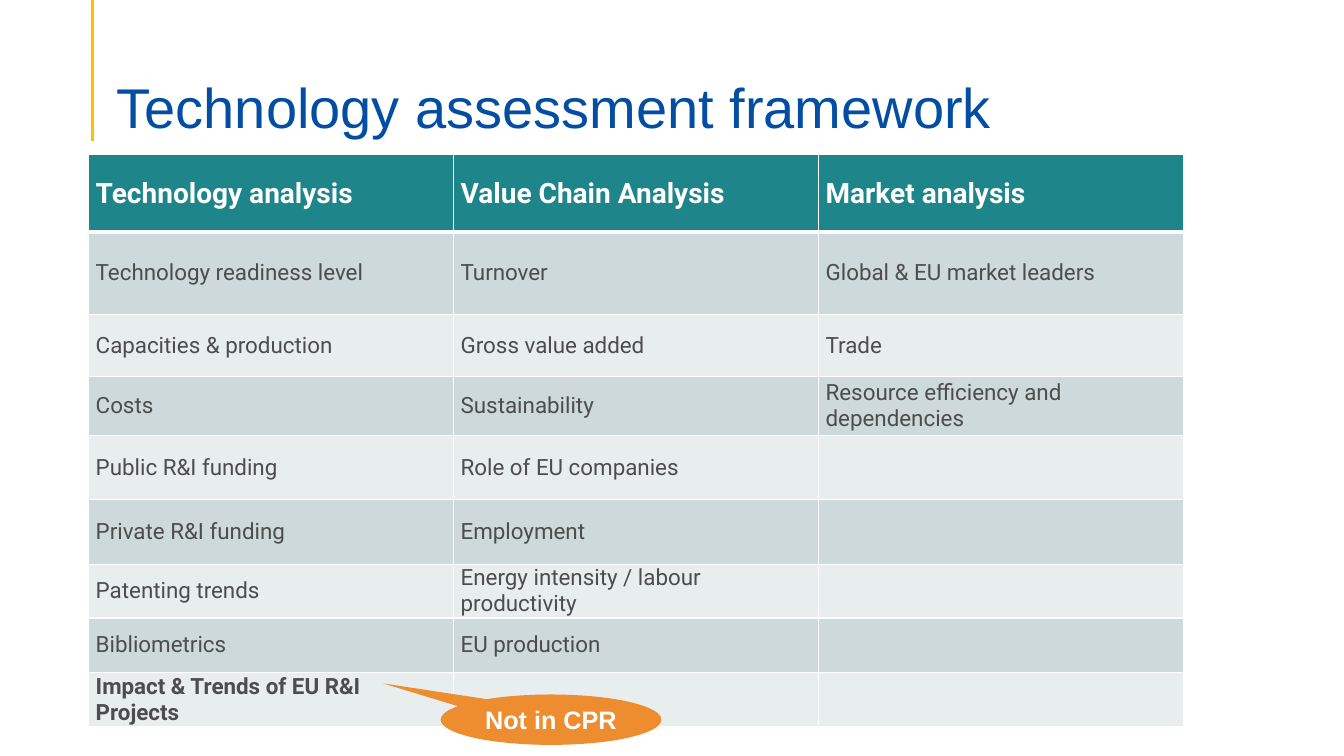
"""Build the technology assessment framework slide."""
import pptx
import pptx.dml.color
import pptx.enum.shapes
import pptx.enum.text
import pptx.oxml
import pptx.oxml.ns
import pptx.util
from pptx.util import Inches

MIDDLE = pptx.enum.text.MSO_ANCHOR.MIDDLE


def color(value):
    return pptx.dml.color.RGBColor.from_string(value)


def style(paragraph, name, size, value, bold=False):
    paragraph.font.name = name
    paragraph.font.size = pptx.util.Pt(size)
    paragraph.font.bold = bold
    paragraph.font.color.rgb = color(value)


presentation = pptx.Presentation()
presentation.slide_width = Inches(13.33)
presentation.slide_height = Inches(7.5)
slide = presentation.slides.add_slide(presentation.slide_layouts[6])

accent = slide.shapes.add_connector(
    pptx.enum.shapes.MSO_CONNECTOR.STRAIGHT, Inches(0.92), 0, Inches(0.92), Inches(1.4))
accent.line.color.rgb = color("FFC000")
accent.line.width = pptx.util.Pt(2.25)
accent._element.spPr.append(pptx.oxml.parse_xml(
    f"<a:effectLst {pptx.oxml.ns.nsdecls('a')}/>"))

title = slide.shapes.add_textbox(Inches(1.06), Inches(0.53), Inches(12.14), Inches(0.86))
title_frame = title.text_frame
title_frame.word_wrap = True
title_frame.vertical_anchor = pptx.enum.text.MSO_ANCHOR.BOTTOM
title_frame.margin_bottom = 0
paragraph = title_frame.paragraphs[0]
paragraph.text = "Technology assessment framework"
paragraph.line_spacing = 1.07
style(paragraph, "Arial", 40, "034EA2")

rows = [
    (0.77, "Technology analysis", "Value Chain Analysis", "Market analysis"),
    (0.82, "Technology readiness level", "Turnover", "Global & EU market leaders"),
    (0.62, "Capacities & production", "Gross value added", "Trade"),
    (0.58, "Costs", "Sustainability", "Resource efficiency and dependencies"),
    (0.64, "Public R&I funding", "Role of EU companies", ""),
    (0.64, "Private R&I funding", "Employment", ""),
    (0.46, "Patenting trends", "Energy intensity / labour productivity", ""),
    (0.54, "Bibliometrics", "EU production", ""),
    (0.47, "Impact & Trends of EU R&I Projects", "", ""),
]
table = slide.shapes.add_table(
    len(rows), 3, Inches(0.88), Inches(1.53), Inches(10.85), Inches(5.61)).table
table.horz_banding = False
for column in table.columns:
    column.width = Inches(3.62)

for row_index, (height, *texts) in enumerate(rows):
    table.rows[row_index].height = Inches(height)
    header = row_index == 0
    last = row_index == len(rows) - 1
    band = "1E858B" if header else ("E8EDEE", "CDD9DA")[row_index % 2]
    for column_index, text in enumerate(texts):
        cell = table.cell(row_index, column_index)
        cell.vertical_anchor = MIDDLE
        cell.margin_left = cell.margin_right = Inches(0.07)
        cell.margin_top = cell.margin_bottom = 0
        properties = cell._tc.get_or_add_tcPr()
        for side in "LRTB":
            thick = (row_index, side) in ((0, "B"), (1, "T"))
            width = pptx.util.Pt(3 if thick else 1)
            properties.append(pptx.oxml.parse_xml(
                f'<a:ln{side} {pptx.oxml.ns.nsdecls("a")} w="{width}">'
                '<a:solidFill><a:srgbClr val="FFFFFF"/></a:solidFill>'
                f'</a:ln{side}>'))
        cell.fill.solid()
        cell.fill.fore_color.rgb = color(band)
        paragraph = cell.text_frame.paragraphs[0]
        paragraph.text = text
        if header:
            paragraph.line_spacing = 1.07
            style(paragraph, "Roboto", 20, "FFFFFF", True)
        else:
            style(paragraph, "Roboto", 16, "4D4D4D", last)

callout = slide.shapes.add_shape(
    pptx.enum.shapes.MSO_SHAPE.OVAL_CALLOUT,
    Inches(4.37), Inches(6.89), Inches(2.19), Inches(0.5))
callout.adjustments[0] = -0.76
callout.adjustments[1] = -0.72
callout.shadow.inherit = False
callout.fill.solid()
callout.fill.fore_color.rgb = color("ED8D2F")
callout.line.fill.background()
callout.text_frame.vertical_anchor = MIDDLE
paragraph = callout.text_frame.paragraphs[0]
paragraph.text = "Not in CPR"
paragraph.alignment = pptx.enum.text.PP_ALIGN.CENTER
style(paragraph, "Arial", 18, "FFFFFF", True)

presentation.save("out.pptx")
